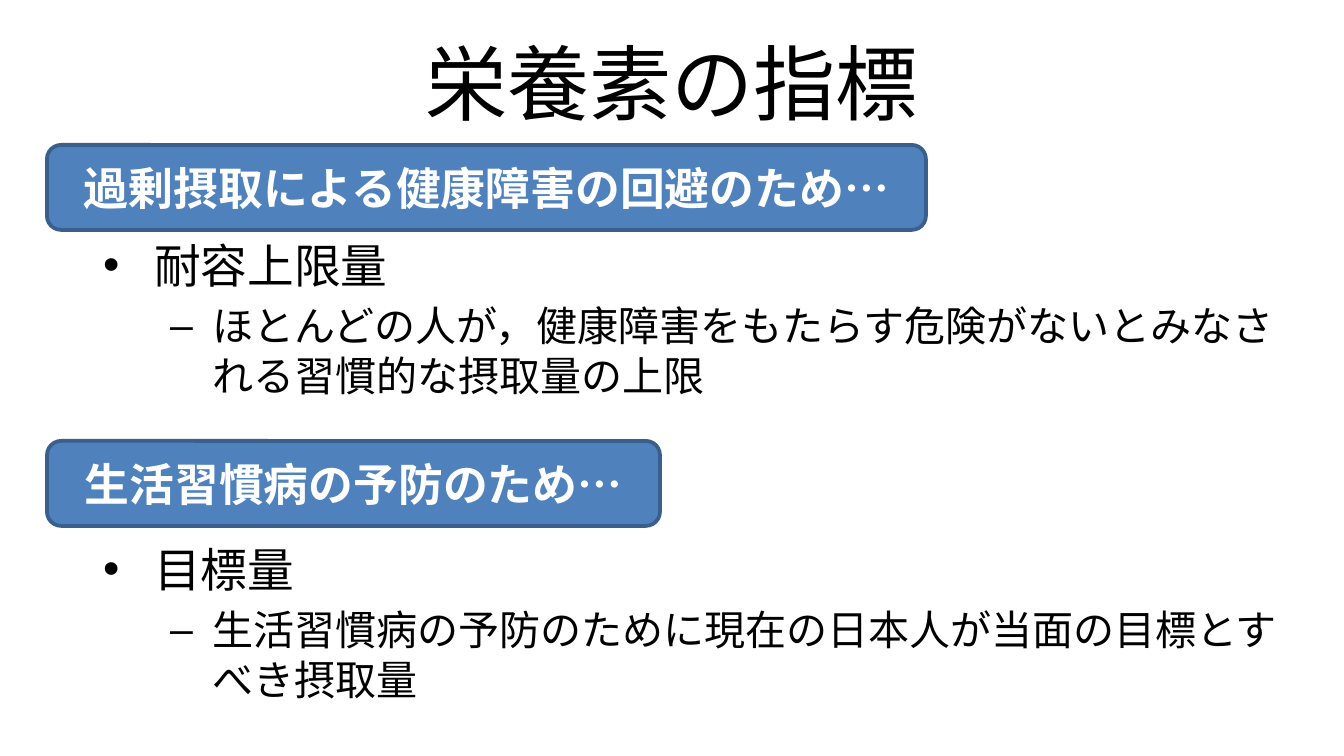
from lxml import etree
from pptx import Presentation
from pptx.dml.color import RGBColor
from pptx.enum.shapes import MSO_SHAPE as Shape
from pptx.enum.text import MSO_ANCHOR as Anchor, PP_ALIGN as Align
from pptx.oxml.ns import qn
from pptx.util import Emu, Pt

PX = 914400 / 134.4
COLORS = {"text": "000000", "banner": "4F81BD", "border": "3A5F8C", "white": "FFFFFF"}

# Each level: bullet, text size, left margin and hanging indent in px
LEVELS = [("•", 25, 51, -51), ("–", 22, 109, -42)]

# Each section: banner top and width, banner text, list top, list texts
SECTIONS = [
    (145, 879, "過剰摂取による健康障害の回避のため…", 230,
     ["耐容上限量",
      "ほとんどの人が，健康障害をもたらす危険がないとみなされる習慣的な摂取量の上限"]),
    (441, 613, "生活習慣病の予防のため…", 534,
     ["目標量",
      "生活習慣病の予防のために現在の日本人が当面の目標とすべき摂取量"]),
]


def px(value):
    return Emu(round(value * PX))


def box(left, top, width, height):
    return [px(value) for value in (left, top, width, height)]


def color(name):
    return RGBColor.from_string(COLORS[name])


def format_runs(paragraph, font, size, color_name, bold=False):
    for run in paragraph.runs:
        run.font.name = font
        run.font.size = Pt(size)
        run.font.bold = bold
        run.font.color.rgb = color(color_name)


def center_text(shape, text, font, size, color_name, bold=False):
    text_frame = shape.text_frame
    text_frame.word_wrap = True
    text_frame.vertical_anchor = Anchor.MIDDLE
    text_frame.text = text
    paragraph = text_frame.paragraphs[0]
    paragraph.alignment = Align.CENTER
    format_runs(paragraph, font, size, color_name, bold)


def add_title(slide, text):
    shape = slide.shapes.add_textbox(*box(67, 19, 1210, 126))
    center_text(shape, text, "Calibri", 44, "text")


def add_banner(slide, top, width, text):
    shape = slide.shapes.add_shape(Shape.ROUNDED_RECTANGLE, *box(47, top, width, 85))
    shape.shadow.inherit = False
    shape.fill.solid()
    shape.fill.fore_color.rgb = color("banner")
    shape.line.color.rgb = color("border")
    shape.line.width = Pt(2)
    center_text(shape, text, "Arial", 24, "white", bold=True)


def set_bullet(paragraph, bullet, margin, indent):
    properties = paragraph._p.get_or_add_pPr()
    properties.set("marL", str(px(margin)))
    properties.set("indent", str(px(indent)))
    etree.SubElement(properties, qn("a:buFont")).set("typeface", "Arial")
    etree.SubElement(properties, qn("a:buChar")).set("char", bullet)


def add_bullet_list(slide, top, texts):
    text_frame = slide.shapes.add_textbox(*box(90, top, 1207, 222)).text_frame
    text_frame.word_wrap = True
    text_frame.text = "\n".join(texts)
    for level, paragraph in enumerate(text_frame.paragraphs):
        bullet, size, margin, indent = LEVELS[level]
        paragraph.level = level
        paragraph.space_before = Pt(size * 0.2)
        set_bullet(paragraph, bullet, margin, indent)
        format_runs(paragraph, "Calibri", size, "text")


def main():
    presentation = Presentation()
    presentation.slide_width, presentation.slide_height = px(1344), px(756)
    slide = presentation.slides.add_slide(presentation.slide_layouts[6])

    # Title
    add_title(slide, "栄養素の指標")

    # Purpose banners, each with its indicator and definition
    for banner_top, banner_width, heading, list_top, texts in SECTIONS:
        add_bullet_list(slide, list_top, texts)
        add_banner(slide, banner_top, banner_width, heading)

    presentation.save("out.pptx")


if __name__ == "__main__":
    main()
